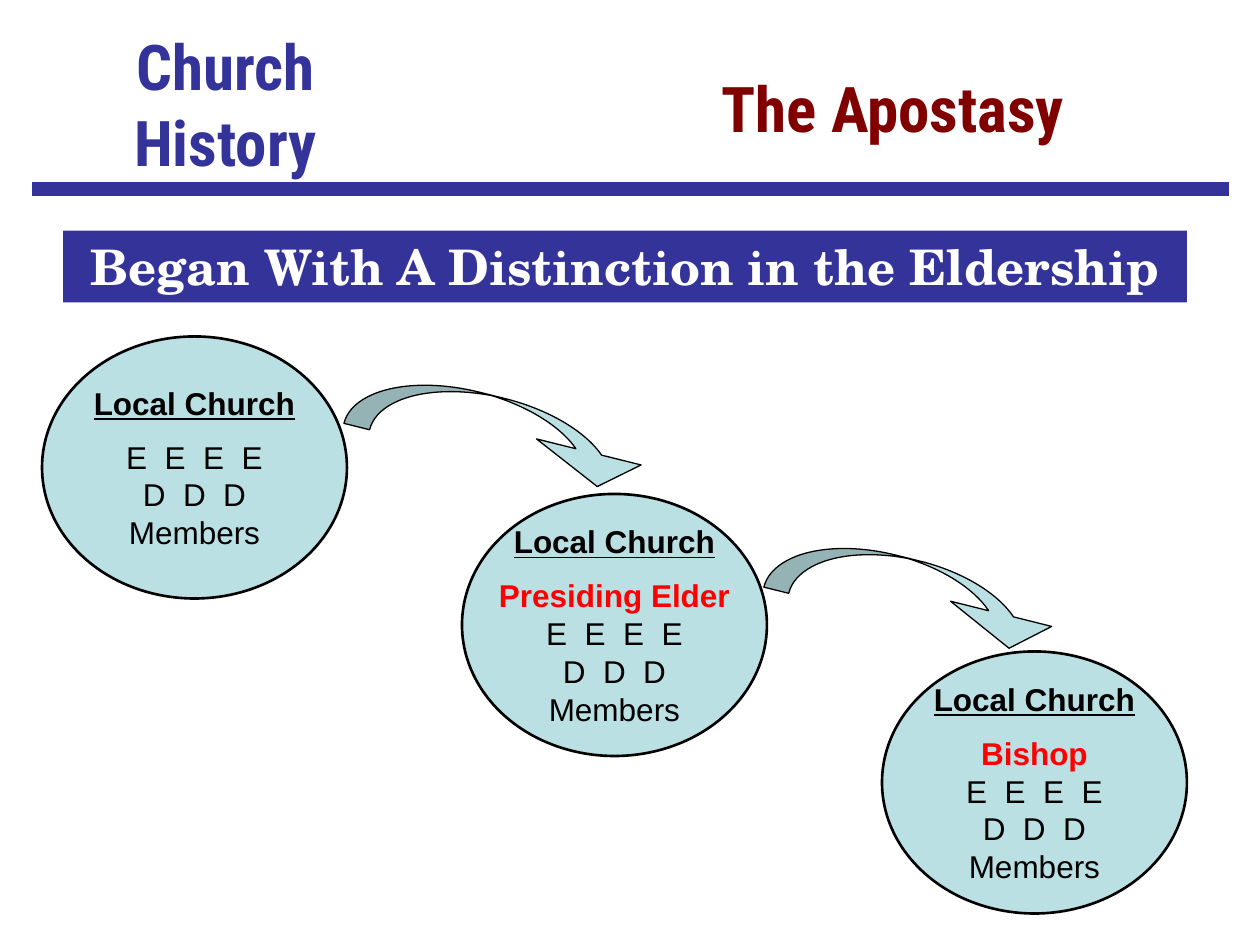
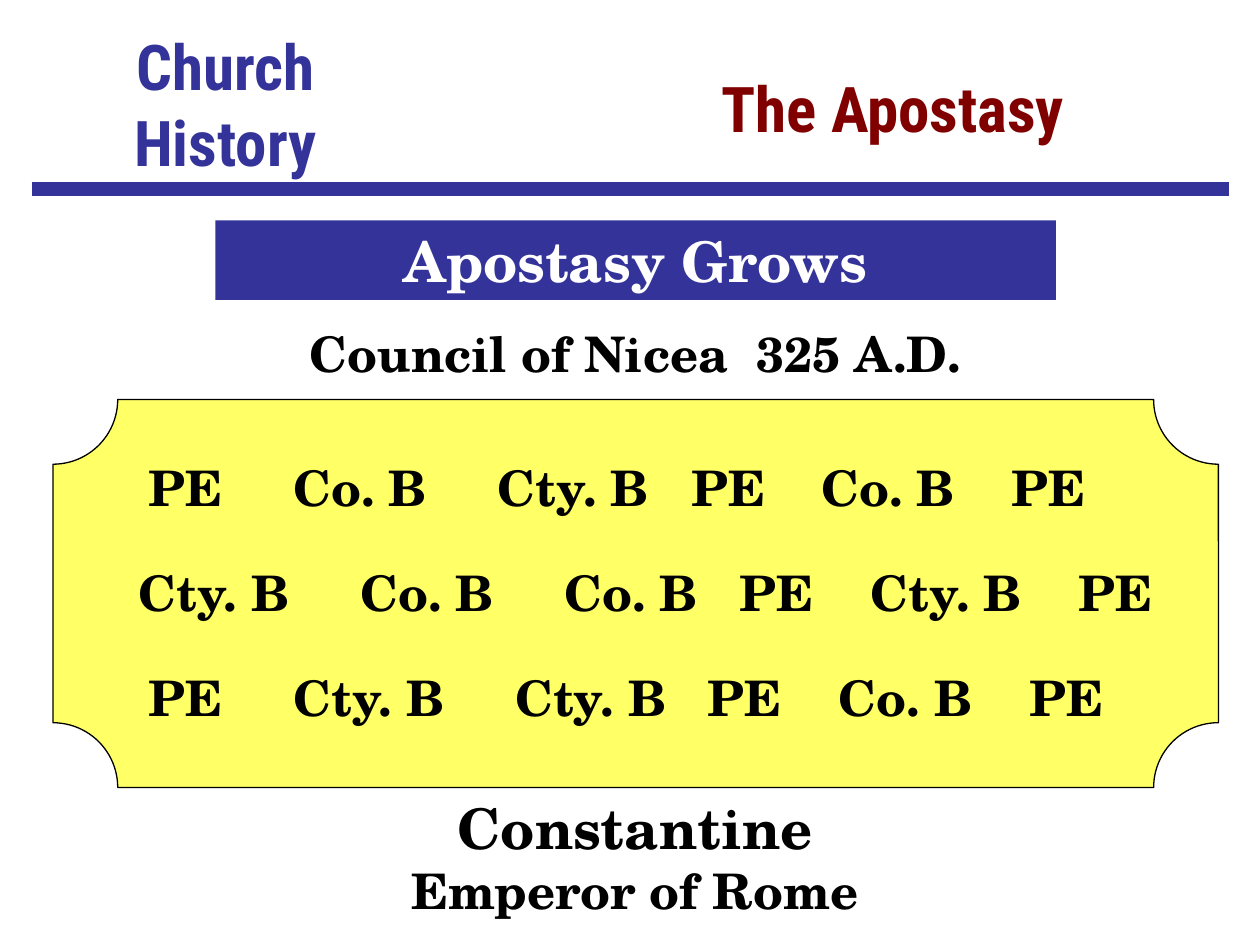
from dataclasses import dataclass

from lxml import etree
from pptx import Presentation
from pptx import util as u
from pptx.dml.color import RGBColor
from pptx.enum import shapes, text
from pptx.oxml import ns


@dataclass(frozen=True)
class Theme:
    navy: str = "333399"
    maroon: str = "800000"
    white: str = "FFFFFF"
    black: str = "000000"
    red: str = "FF0000"
    aqua: str = "BBE0E3"
    yellow: str = "FFFF66"
    title_font: str = "Roboto Condensed"
    body_font: str = "TeX Gyre Schola"
    church_font: str = "Arial"
    title: int = 36
    large: int = 32
    medium: int = 28
    small: int = 18


THEME = Theme()


@dataclass(frozen=True)
class Box:
    left: float
    top: float
    width: float
    height: float

    def inches(self):
        return [u.Inches(v) for v in (self.left, self.top, self.width, self.height)]

    def inner(self, left, top, width, height):
        """Box placed from this box's top left corner."""
        return Box(self.left + left, self.top + top, width, height)


PAGE = Box(0, 0, 10, 7.5)


def add_span(para, words, size, color=THEME.black, font=THEME.body_font,
             bold=True, underline=False):
    span = para.add_run()
    span.text = words
    span.font.size = u.Pt(size)
    span.font.name = font
    span.font.bold = bold
    span.font.underline = underline
    span.font.color.rgb = RGBColor.from_string(color)


def add_para(frame, centred=True):
    """Return the frame's first paragraph while it is empty, then new ones."""
    first = frame.paragraphs[0]
    para = frame.add_paragraph() if first.runs else first
    para.alignment = text.PP_ALIGN.CENTER if centred else text.PP_ALIGN.LEFT
    return para


def add_text_frame(page, box, wrap=True):
    frame = page.shapes.add_textbox(*box.inches()).text_frame
    frame.word_wrap = wrap
    return frame


def add_figure(page, kind, box, fill, line_width=0):
    figure = page.shapes.add_shape(kind, *box.inches())
    figure.shadow.inherit = False
    figure.fill.solid()
    figure.fill.fore_color.rgb = RGBColor.from_string(fill)
    if line_width:
        figure.line.color.rgb = RGBColor.from_string(THEME.black)
        figure.line.width = u.Pt(line_width)
    else:
        figure.line.fill.background()
    return figure


def add_header(page, box):
    topic = add_text_frame(page, box.inner(0, 0.17, 3.08, 1.08), wrap=False)
    for word in ("Church", "History"):
        add_span(add_para(topic), word, THEME.title, THEME.navy, THEME.title_font)

    rule = page.shapes.add_connector(
        shapes.MSO_CONNECTOR.STRAIGHT,
        u.Inches(box.left), u.Inches(box.top + box.height),
        u.Inches(box.left + box.width), u.Inches(box.top + box.height))
    rule.line.color.rgb = RGBColor.from_string(THEME.navy)
    rule.line.width = u.Pt(8)
    etree.SubElement(rule.element.spPr, ns.qn("a:effectLst"))

    subject = add_text_frame(page, box.inner(4.25, 0.5, 5.17, 0.71), wrap=False)
    add_span(add_para(subject), "The Apostasy", THEME.title, THEME.maroon,
             THEME.title_font)


def add_banner(page, box, words, size):
    banner = add_figure(page, shapes.MSO_SHAPE.RECTANGLE, box, THEME.navy)
    frame = banner.text_frame
    frame.word_wrap = True
    frame.vertical_anchor = text.MSO_ANCHOR.TOP
    add_span(add_para(frame), words, size, THEME.white)


def add_church(page, box, leader):
    church = add_figure(page, shapes.MSO_SHAPE.OVAL, box, THEME.aqua, 1.5)
    frame = church.text_frame
    frame.word_wrap = False
    frame.vertical_anchor = text.MSO_ANCHOR.MIDDLE
    heading = add_para(frame)
    heading.space_after = u.Pt(9.2)
    add_span(heading, "Local Church", THEME.small, font=THEME.church_font,
             underline=True)
    if leader:
        add_span(add_para(frame), leader, THEME.small, THEME.red, THEME.church_font)
    for group in ("E  E  E  E", "D  D  D", "Members"):
        add_span(add_para(frame), group, THEME.small, font=THEME.church_font,
                 bold=False)


def add_swoop(page, box):
    """Curved arrow whose band and head keep their share of its width."""
    swoop = add_figure(page, shapes.MSO_SHAPE.CURVED_DOWN_ARROW, box,
                       THEME.aqua, 0.75)
    swoop.rotation = 14
    swoop.adjustments[0] = 0.168 * box.width
    swoop.adjustments[1] = 0.684 * box.width
    swoop.adjustments[2] = 0.5


def add_bishop_row(page, box, titles, stops):
    """One line of titles; each one after the first starts at a tab stop."""
    para = add_para(add_text_frame(page, box), centred=False)
    tab_list = etree.SubElement(para._p.get_or_add_pPr(), ns.qn("a:tabLst"))
    for stop in stops:
        etree.SubElement(tab_list, ns.qn("a:tab"), pos=str(u.Inches(stop)), algn="l")
    add_span(para, "\t".join(titles), THEME.medium)


def add_council(page, box):
    plaque = add_figure(page, shapes.MSO_SHAPE.PLAQUE, box, THEME.yellow, 0.75)
    plaque.adjustments[0] = 0.167

    caption = add_text_frame(page, box.inner(1.94, -0.65, 5.37, 0.57), wrap=False)
    add_span(add_para(caption, centred=False), "Council of Nicea  325 A.D.",
             THEME.medium)

    emperor = add_para(add_text_frame(page, box.inner(2.66, box.height, 3.92, 1.1)))
    add_span(emperor, "Constantine", THEME.large)
    add_span(emperor, " Emperor of Rome", THEME.medium)

    elder, county, city = "PE", "Co. B", "Cty. B"
    rows = (
        (0.66, 7.83, (elder, county, city, elder, county, elder),
         (1.15, 2.77, 4.31, 5.34, 6.85)),
        (0.58, 8.33, (city, county, county, elder, city, elder),
         (1.76, 3.38, 4.77, 5.81, 7.46)),
        (0.66, 7.83, (elder, city, city, elder, county, elder),
         (1.15, 2.91, 4.44, 5.48, 6.99)),
    )
    for index, (left, width, titles, stops) in enumerate(rows):
        row = box.inner(left, 0.41 + index * 5 / 6, width, 0.57)
        add_bishop_row(page, row, titles, stops)


def add_page(deck):
    page = deck.slides.add_slide(deck.slide_layouts[6])
    add_header(page, PAGE.inner(0.25, 0, 9.5, 1.5))
    return page


def build_eldership(deck):
    page = add_page(deck)
    add_banner(page, PAGE.inner(0.5, 1.83, 8.92, 0.57),
               "Began With A Distinction in the Eldership", THEME.medium)
    churches = [PAGE.inner(1 / 3 + index * 10 / 3, 2.67 + index * 1.25, 2.42, 2.08)
                for index in range(3)]
    for church, leader in zip(churches, ("", "Presiding Elder", "Bishop")):
        add_church(page, church, leader)
    for church, top, width in zip(churches, (0.5, 0.54), (2.5, 2.42)):
        add_swoop(page, church.inner(2.42, top, width, 0.5))


def build_growth(deck):
    page = add_page(deck)
    add_banner(page, PAGE.inner(1.71, 1.75, 6.67, 0.63), "Apostasy Grows",
               THEME.large)
    add_council(page, PAGE.inner(0.42, 3.17, 9.25, 3.08))


def main():
    deck = Presentation()
    deck.slide_width = u.Inches(PAGE.width)
    deck.slide_height = u.Inches(PAGE.height)
    build_eldership(deck)
    build_growth(deck)
    deck.save("out.pptx")


if __name__ == "__main__":
    main()
